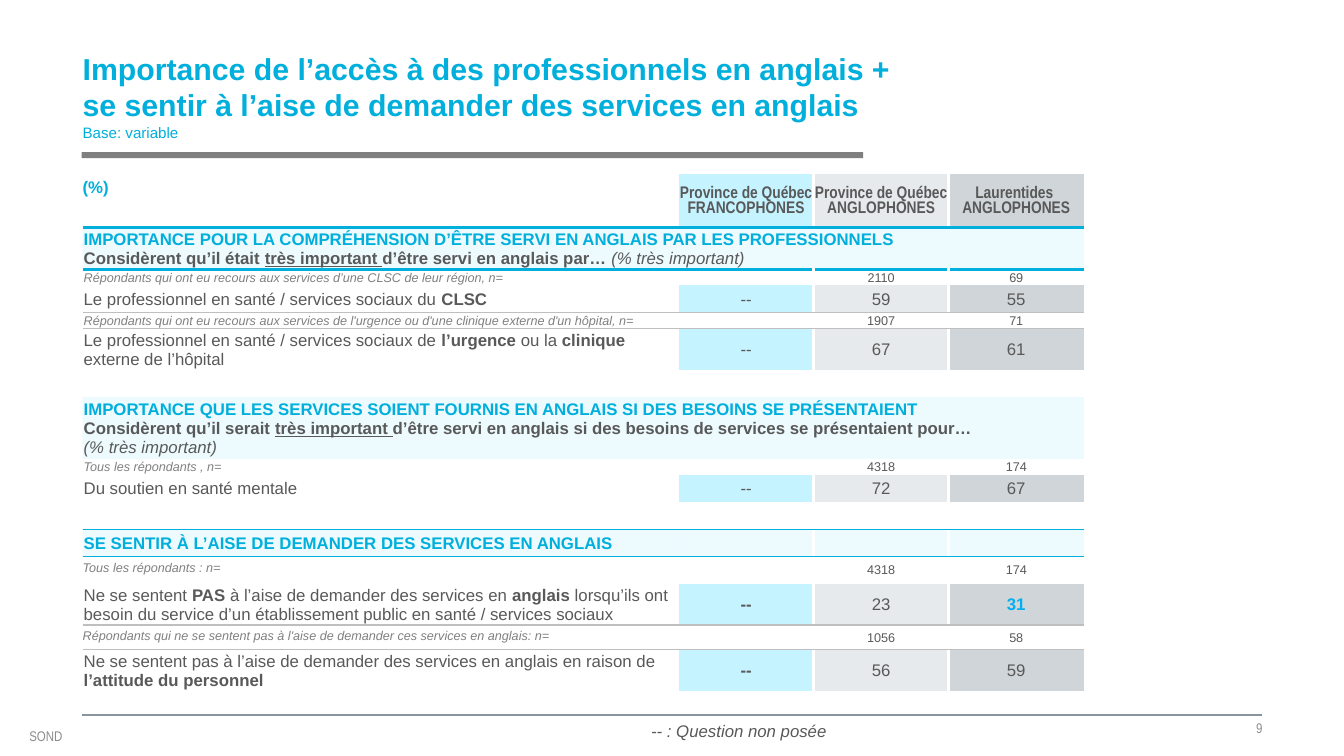
from lxml.etree import SubElement
from pptx import Presentation
from pptx.dml.color import RGBColor
from pptx.enum.shapes import MSO_CONNECTOR, MSO_SHAPE
from pptx.enum.text import MSO_ANCHOR, PP_ALIGN
from pptx.oxml.ns import qn
from pptx.util import Inches, Pt

COLORS = {
    "accent": "00AFDC", "highlight": "00B0F0", "text": "595959", "base": "808080",
    "footer": "8C8C8C", "title_bar": "7F7F7F", "footer_line": "88959E",
    "row_line": "BFBFBF", "white": "FFFFFF", "section": "C5F3FF",
    "francophones": "C5F3FF", "anglophones": "E7EAEC", "laurentides": "CFD5D8",
}
VALUE_FILLS = ["francophones", "anglophones", "laurentides"]
NO_TABLE_STYLE = "{2D5ABB26-0587-4C30-8999-92F81FD0307C}"

# A paragraph is a string or a list of (text, marks) runs.
# Marks: b bold, i italic, u underlined, a accent colour, h highlight colour.
TITLE = "Importance de l’accès à des professionnels en anglais + se sentir à l’aise de demander des services en anglais"
SUBTITLE = "Base: variable"
FOOTER = "SOND"
PAGE_NUMBER = "9"
NOTE = "-- : Question non posée"

COLUMN_WIDTHS = [5.91, 1.34, 1.34, 1.34]
# Each row: height, kind, label paragraphs, values, line below (colour, points)
ROWS = [
    (0.53, "header", [[("(%)", "ab")]],
     [["Province de Québec FRANCOPHONES"], ["Province de Québec ANGLOPHONES"],
      ["Laurentides ", "ANGLOPHONES"]], ("accent", 2.25)),
    (0.39, "section", [
        [("IMPORTANCE POUR LA COMPRÉHENSION D’ÊTRE SERVI EN ANGLAIS PAR LES PROFESSIONNELS", "ab")],
        [("Considèrent qu’il était ", "b"), ("très important ", "bu"),
         ("d’être servi en anglais par… ", "b"), ("(% très important)", "i")]], None, None),
    (0.15, "base", ["Répondants qui ont eu recours aux services d’une CLSC de leur région, n="],
     [[], ["2110"], ["69"]], None),
    (0.27, "score", [[("Le professionnel en santé / services sociaux du ", ""), ("CLSC", "b")]],
     [["--"], ["59"], ["55"]], ("row_line", 1)),
    (0.15, "base",
     ["Répondants qui ont eu recours aux services de l'urgence ou d'une clinique externe d'un hôpital, n="],
     [[], ["1907"], ["71"]], None),
    (0.39, "score", [
        [("Le professionnel en santé / services sociaux de ", ""), ("l’urgence", "b"),
         (" ou la ", ""), ("clinique", "b"), (" externe de l’hôpital", "")]],
     [["--"], ["67"], ["61"]], None),
    (0.27, "spacer", [], [[], [], []], None),
    (0.57, "section", [
        [("IMPORTANCE QUE LES SERVICES SOIENT FOURNIS EN ANGLAIS SI DES BESOINS SE PRÉSENTAIENT", "ab")],
        [("Considèrent qu’il serait ", "b"), ("très important ", "bu"),
         ("d’être servi en anglais si des besoins de services se présentaient pour…", "b")],
        [("(% très important)", "i")]], None, None),
    (0.15, "base", ["Tous les répondants , n="], [[], ["4318"], ["174"]], None),
    (0.27, "score", ["Du soutien en santé mentale"], [["--"], ["72"], ["67"]], None),
    (0.27, "spacer", [], [[], [], []], ("accent", 1)),
    (0.27, "section", [[("SE SENTIR À L’AISE DE DEMANDER DES SERVICES EN ANGLAIS", "ab")]],
     [[], [], []], None),
    (0.27, "tall base", ["Tous les répondants : n="], [[], ["4318"], ["174"]], None),
    (0.38, "score", [
        [("Ne se sentent ", ""), ("PAS ", "b"), ("à l’aise de demander des services en ", ""),
         ("anglais", "b"),
         (" lorsqu’ils ont besoin du service d’un établissement public en santé / services sociaux", "")]],
     [[[("--", "b")]], ["23"], [[("31", "bh")]]], ("row_line", 1)),
    (0.24, "tall base",
     ["Répondants qui ne se sentent pas à l'aise de demander ces services en anglais: n="],
     [[], ["1056"], ["58"]], None),
    (0.39, "score", [
        [("Ne se sentent pas à l’aise de demander des services en anglais en raison de ", ""),
         ("l’attitude du personnel", "b")]],
     [[[("--", "b")]], ["56"], ["59"]], None),
]


def rgb(name):
    return RGBColor.from_string(COLORS[name])


def write(paragraph, content, size=12, font="Arial", color="text", marks="",
          align=PP_ALIGN.LEFT, line_spacing=None, space_after=None):
    paragraph.alignment = align
    if line_spacing:
        paragraph.line_spacing = line_spacing
    if space_after:
        paragraph.space_after = Pt(space_after)
    runs = [(content, "")] if isinstance(content, str) else content
    for text, run_marks in runs:
        run = paragraph.add_run()
        run.text = text
        active = marks + run_marks
        run.font.size, run.font.name = Pt(size), font
        run.font.bold = "b" in active
        run.font.italic = "i" in active
        run.font.underline = "u" in active
        run.font.color.rgb = rgb("accent" if "a" in active else "highlight" if "h" in active else color)


def write_all(frame, paragraphs, **style):
    for index, content in enumerate(paragraphs):
        write(frame.add_paragraph() if index else frame.paragraphs[0], content, **style)


def add_text(slide, box, margins=(0, 0), wrap=True, anchor=MSO_ANCHOR.MIDDLE):
    frame = slide.shapes.add_textbox(*map(Inches, box)).text_frame
    frame.word_wrap, frame.vertical_anchor = wrap, anchor
    frame.margin_left = frame.margin_right = Inches(margins[0])
    frame.margin_top = frame.margin_bottom = Inches(margins[1])
    return frame


def add_border(cell, side, color, points):
    line = SubElement(cell._tc.get_or_add_tcPr(), qn("a:ln" + side), w=str(Pt(points)))
    SubElement(SubElement(line, qn("a:solidFill")), qn("a:srgbClr"), val=COLORS[color])


def fill_cell(cell, color, alpha=None):
    if color is None:
        cell.fill.background()
        return
    cell.fill.solid()
    cell.fill.fore_color.rgb = rgb(color)
    if alpha:
        tint = cell._tc.tcPr.find(qn("a:solidFill"))[0]
        SubElement(tint, qn("a:alpha"), val=str(alpha * 1000))


def format_cell(cell, column, kind, paragraphs, line_above, line_below, spanned):
    """Borders go in before the fill, as the schema orders them."""
    is_label = column == 0
    if not spanned:
        if column > 1:
            add_border(cell, "L", "white", 2.25)
        if 0 < column < 3:
            add_border(cell, "R", "white", 2.25)
    if line_above:
        add_border(cell, "T", *line_above)
    if line_below:
        add_border(cell, "B", *line_below)

    if kind == "section":
        fill_cell(cell, "section", alpha=30)
    elif kind in ("header", "score") and not is_label:
        fill_cell(cell, VALUE_FILLS[column - 1])
    else:
        fill_cell(cell, None)

    style = {"align": PP_ALIGN.LEFT if is_label else PP_ALIGN.CENTER}
    if kind.endswith("base"):
        style["size"] = 9
        if is_label:
            style.update(color="base", marks="i")
    if kind == "header" and not is_label:
        style.update(font="Arial Narrow", marks="b")
    if is_label and kind in ("header", "tall base"):
        style.update(line_spacing=0.95, space_after=6 if kind == "tall base" else None)
        cell.vertical_anchor = MSO_ANCHOR.TOP
        margins = (0, 0.05, 0, 0.05)
    else:
        cell.vertical_anchor = MSO_ANCHOR.MIDDLE
        margins = (0.01, 0.01, 0.01, 0)
    cell.margin_left, cell.margin_top, cell.margin_right, cell.margin_bottom = map(Inches, margins)
    write_all(cell.text_frame, paragraphs, **style)
    if not paragraphs:
        SubElement(cell.text_frame.paragraphs[0]._p, qn("a:endParaRPr"), sz="800")


def add_results_table(slide):
    heights = [row[0] for row in ROWS]
    table = slide.shapes.add_table(
        len(ROWS), len(COLUMN_WIDTHS), Inches(0.82), Inches(1.73),
        Inches(sum(COLUMN_WIDTHS)), Inches(sum(heights))).table
    table.first_row = table.horz_banding = False
    table._tbl.tblPr.find(qn("a:tableStyleId")).text = NO_TABLE_STYLE
    for column, width in zip(table.columns, COLUMN_WIDTHS):
        column.width = Inches(width)
    line_above = None
    for index, (height, kind, label, values, line_below) in enumerate(ROWS):
        table.rows[index].height = Inches(height)
        spanned = values is None
        if spanned:
            table.cell(index, 0).merge(table.cell(index, 3))
        for column, paragraphs in enumerate([label] + (values or [[], [], []])):
            format_cell(table.cell(index, column), column, kind, paragraphs,
                        line_above, line_below, spanned)
        line_above = line_below


def main():
    presentation = Presentation()
    presentation.slide_width, presentation.slide_height = Inches(13.33), Inches(7.5)
    slide = presentation.slides.add_slide(presentation.slide_layouts[6])

    footer_line = slide.shapes.add_connector(
        MSO_CONNECTOR.STRAIGHT, Inches(0.81), Inches(7.09), Inches(12.52), Inches(7.09))
    footer_line.line.color.rgb, footer_line.line.width = rgb("footer_line"), Pt(1.5)
    SubElement(footer_line._element.spPr, qn("a:effectLst"))

    title_bar = slide.shapes.add_shape(
        MSO_SHAPE.RECTANGLE, Inches(0.81), Inches(1.51), Inches(7.75), Inches(0.06))
    title_bar.shadow.inherit = False
    title_bar.fill.solid()
    title_bar.fill.fore_color.rgb = rgb("title_bar")
    title_bar.line.fill.background()

    title = add_text(slide, (0.82, 0.4, 8.14, 1.1))
    write(title.paragraphs[0], TITLE, size=21.6, color="accent", marks="b")
    write(title.add_paragraph(), SUBTITLE, size=10.8, color="accent")

    footer_style = {"size": 10, "font": "Arial Narrow", "color": "footer"}
    write_all(add_text(slide, (0.29, 7.2, 0.41, 0.21)), [FOOTER], **footer_style)
    write_all(add_text(slide, (8.73, 7.09, 3.79, 0.26)), [PAGE_NUMBER],
              align=PP_ALIGN.RIGHT, **footer_style)

    add_results_table(slide)
    note = add_text(slide, (6.36, 7.1, 1.96, 0.3), margins=(0.1, 0.05), wrap=False, anchor=MSO_ANCHOR.TOP)
    write_all(note, [NOTE], marks="i")
    presentation.save("out.pptx")


if __name__ == "__main__":
    main()
